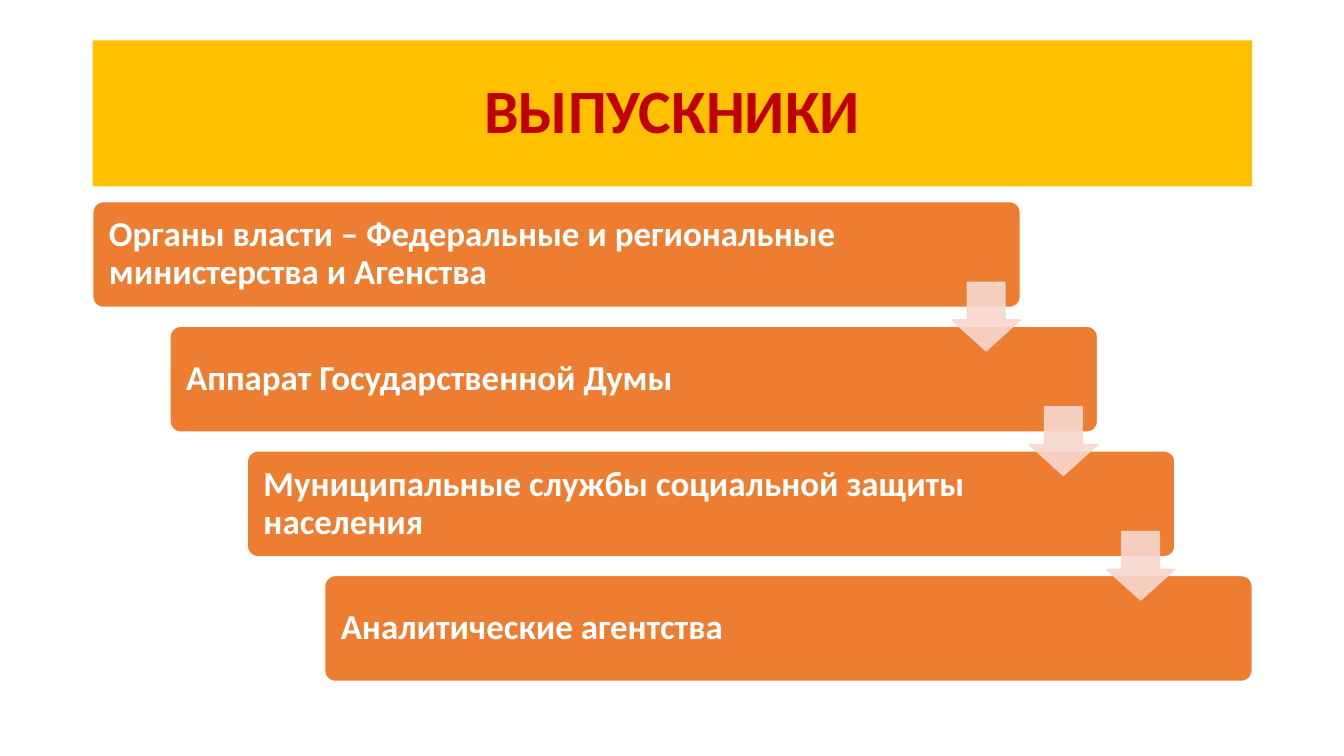
from dataclasses import dataclass

from lxml import etree
from pptx import Presentation
from pptx import util as u
from pptx.dml.color import RGBColor
from pptx.enum import shapes, text
from pptx.oxml.ns import qn
from pptx.shapes.autoshape import Shape
from pptx.slide import Slide

FONT = "Calibri"
WHITE, GOLD, RED = "FFFFFF", "FFC000", "C00000"
ORANGE, PINK = "ED7D31", "F8D7CE"

LEFT, TOP = 0.92, 2.0
STEP_WIDTH, STEP_HEIGHT = 9.2, 1.05
SHIFT_X, SHIFT_Y = 2.3 / 3, 3.71 / 3
ARROW_SIZE, ARROW_DROP = 0.68, 0.8

EMPLOYERS = [
    "Органы власти – Федеральные и региональные министерства и Агенства",
    "Аппарат Государственной Думы",
    "Муниципальные службы социальной защиты населения",
    "Аналитические агентства",
]


@dataclass
class Area:
    left: float
    top: float
    width: float
    height: float


def color(code: str) -> RGBColor:
    return RGBColor.from_string(code)


def add_block(page: Slide, kind: shapes.MSO_SHAPE, area: Area, fill: str,
              line: str | None = None, adjustments: tuple[float, ...] = ()) -> Shape:
    block = page.shapes.add_shape(
        kind, u.Inches(area.left), u.Inches(area.top),
        u.Inches(area.width), u.Inches(area.height))
    block.shadow.inherit = False
    block.fill.solid()
    block.fill.fore_color.rgb = color(fill)
    if line:
        block.line.color.rgb = color(line)
        block.line.width = u.Pt(1)
    else:
        block.line.fill.background()
    for index, value in enumerate(adjustments):
        block.adjustments[index] = value
    return block


def write(block: Shape, words: str, *, size: float, ink: str,
          align: text.PP_ALIGN = text.PP_ALIGN.LEFT,
          margin_left: float = 0.1, margin_right: float = 0.1) -> None:
    frame = block.text_frame
    frame.word_wrap = True
    frame.vertical_anchor = text.MSO_ANCHOR.MIDDLE
    frame.margin_left = u.Inches(margin_left)
    frame.margin_right = u.Inches(margin_right)
    para = frame.paragraphs[0]
    para.alignment = align
    para.line_spacing = 0.9
    span = para.add_run()
    span.text = words
    span.font.name = FONT
    span.font.size = u.Pt(size)
    span.font.bold = True
    span.font.color.rgb = color(ink)


def set_opacity(block: Shape, percent: int) -> None:
    """Apply the opacity to both the fill and the outline."""
    for tone in block.element.spPr.iter(qn("a:srgbClr")):
        etree.SubElement(tone, qn("a:alpha"), val=str(percent * 1000))


def add_step(page: Slide, index: int, words: str) -> None:
    area = Area(LEFT + index * SHIFT_X, TOP + index * SHIFT_Y, STEP_WIDTH, STEP_HEIGHT)
    step = add_block(page, shapes.MSO_SHAPE.ROUNDED_RECTANGLE, area, ORANGE, WHITE, (0.1,))
    write(step, words, size=25, ink=WHITE, margin_left=0.13, margin_right=1.3)


def add_arrow(page: Slide, index: int) -> None:
    """Draw the arrow that leads from the step at index to the next one."""
    area = Area(LEFT + STEP_WIDTH - ARROW_SIZE + index * SHIFT_X,
                TOP + ARROW_DROP + index * SHIFT_Y, ARROW_SIZE, ARROW_SIZE)
    arrow = add_block(page, shapes.MSO_SHAPE.DOWN_ARROW, area, PINK, PINK, (0.55, 0.45))
    set_opacity(arrow, 90)


def main() -> None:
    deck = Presentation()
    deck.slide_width, deck.slide_height = u.Inches(13.33), u.Inches(7.5)
    page = deck.slides.add_slide(deck.slide_layouts[6])

    title = add_block(page, shapes.MSO_SHAPE.RECTANGLE, Area(LEFT, 0.4, 11.5, 1.45), GOLD)
    write(title, "ВЫПУСКНИКИ", size=44, ink=RED, align=text.PP_ALIGN.CENTER)
    for index, employer in enumerate(EMPLOYERS):
        add_step(page, index, employer)
    for index in range(len(EMPLOYERS) - 1):
        add_arrow(page, index)

    deck.save("out.pptx")


if __name__ == "__main__":
    main()
